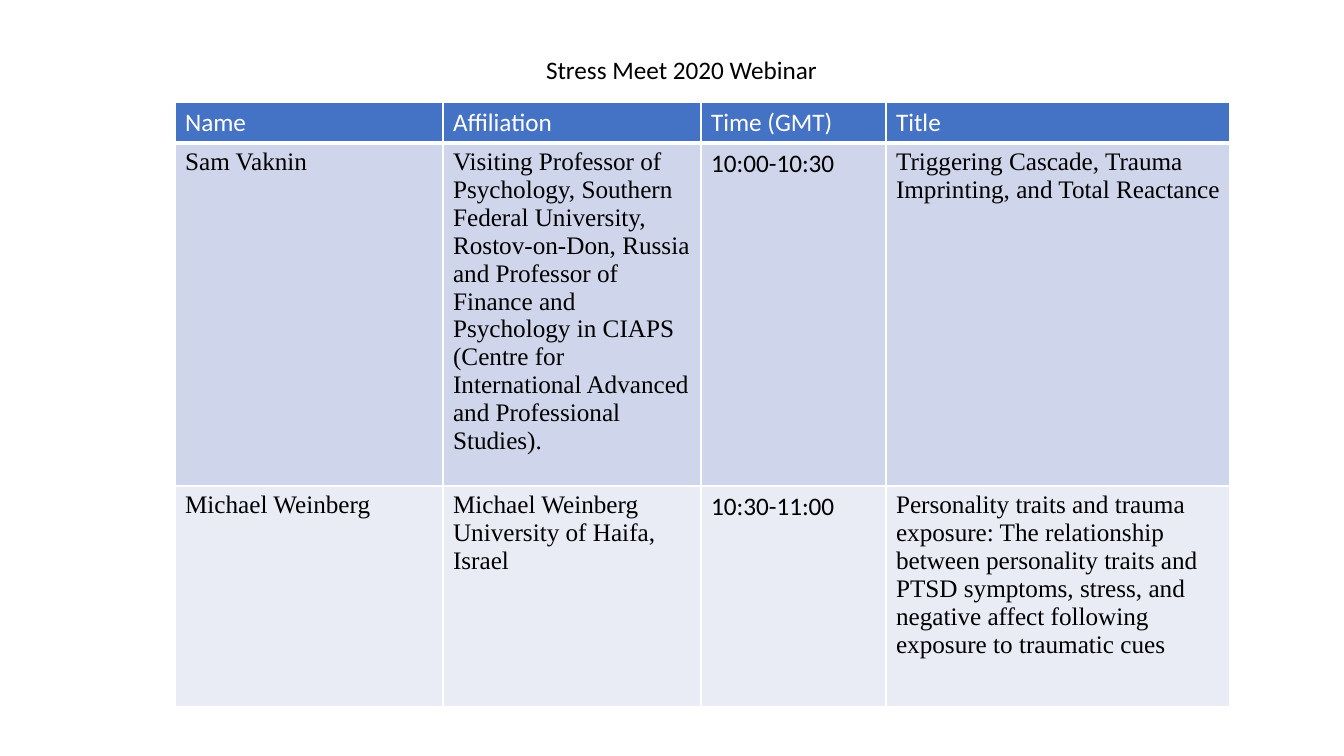
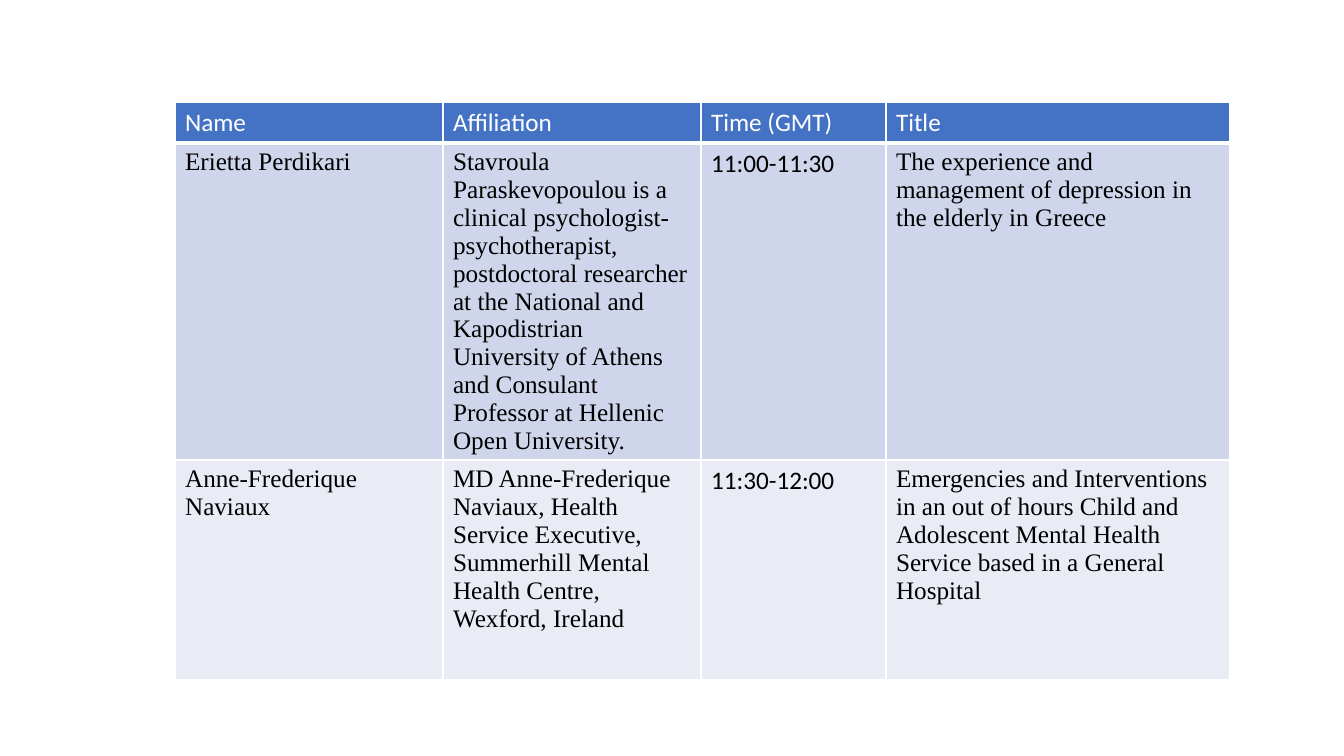
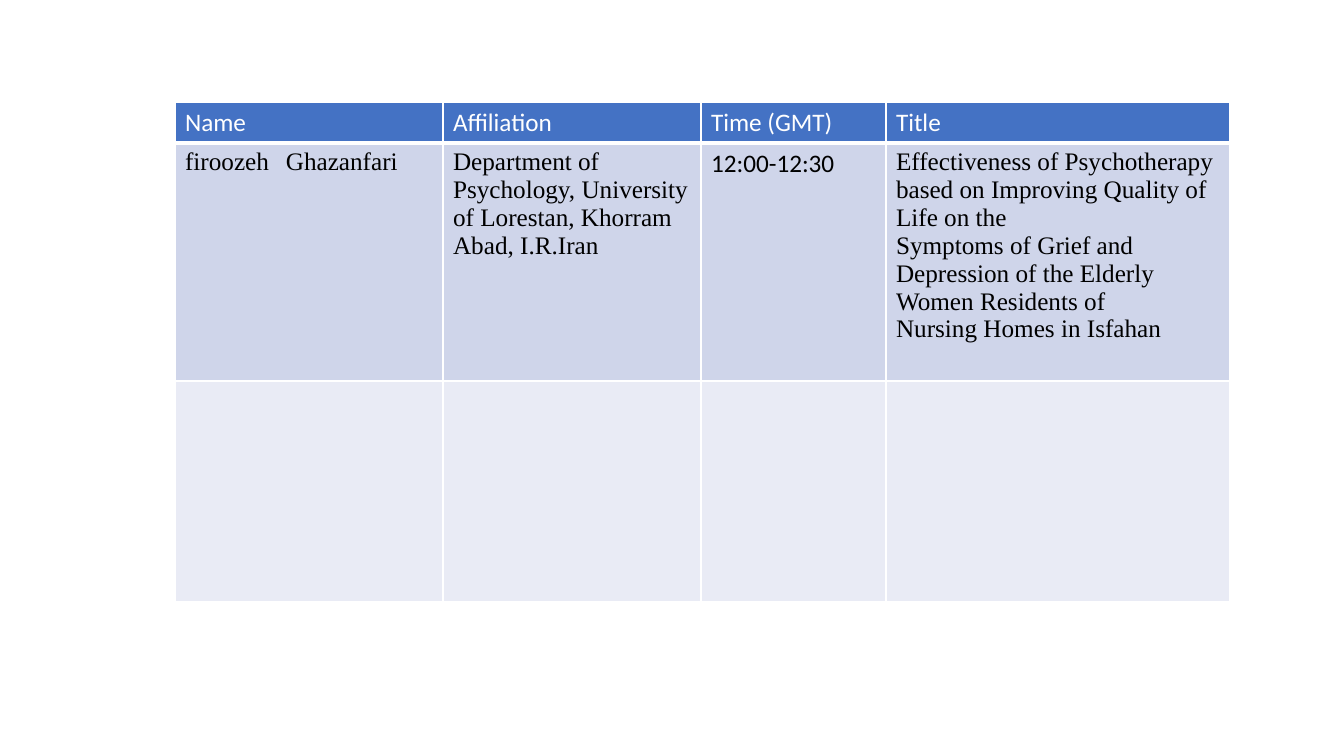
from lxml.etree import SubElement
from pptx import Presentation
from pptx.dml.color import RGBColor
from pptx.enum.text import MSO_ANCHOR, PP_ALIGN
from pptx.oxml.ns import qn
from pptx.util import Pt

PX = 12192000 / 1344
SANS, SERIF = "Calibri", "Times New Roman"
WHITE, BLACK, BLUE = "FFFFFF", "000000", "4472C4"
BANDS = ["CFD5EA", "E9EBF5"]

HEADER = ["Name", "Affiliation", "Time (GMT)", "Title"]
COLUMN_FONTS = [SERIF, SERIF, SANS, SERIF]
COLUMN_WIDTHS = [268, 258, 185, 344]
HEADER_HEIGHT = 41

SESSIONS = [
    ("Stress Meet 2020 Webinar", [343, 221], [
        ["Sam Vaknin",
         "Visiting Professor of Psychology, Southern Federal University, "
         "Rostov-on-Don, Russia and Professor of Finance and Psychology in CIAPS "
         "(Centre for International Advanced and Professional Studies).",
         "10:00-10:30",
         "Triggering Cascade, Trauma Imprinting, and Total Reactance"],
        ["Michael Weinberg",
         "Michael Weinberg\nUniversity of Haifa, Israel",
         "10:30-11:00",
         "Personality traits and trauma exposure: The relationship between "
         "personality traits and PTSD symptoms, stress, and negative affect "
         "following exposure to traumatic cues"]]),
    (None, [317, 220], [
        ["Erietta Perdikari",
         "Stavroula Paraskevopoulou is a clinical psychologist-psychotherapist, "
         "postdoctoral researcher at the National and Kapodistrian University of "
         "Athens and Consulant Professor at Hellenic Open University.",
         "11:00-11:30",
         "The experience and management of depression in the elderly in Greece"],
        ["Anne-Frederique Naviaux",
         "MD Anne-Frederique Naviaux, Health Service Executive, Summerhill "
         "Mental Health Centre, Wexford, Ireland",
         "11:30-12:00",
         "Emergencies and Interventions in an out of hours Child and Adolescent "
         "Mental Health Service based in a General Hospital"]]),
    (None, [238, 221], [
        ["firoozeh\tGhazanfari",
         "Department of Psychology, University of Lorestan, Khorram Abad, I.R.Iran",
         "12:00-12:30",
         "Effectiveness of Psychotherapy based on Improving Quality of Life on the\n"
         "Symptoms of Grief and Depression of the Elderly Women Residents of\n"
         "Nursing Homes in Isfahan"],
        [""] * 4]),
]


def px(n):
    return round(n * PX)


def rgb(value):
    return RGBColor.from_string(value)


class Deck:
    """Holds the presentation, its style and the current slide."""

    def __init__(self):
        self.prs = Presentation()
        self.prs.slide_width, self.prs.slide_height = px(1344), px(756)
        self.s = None

    def slide(self, title=None):
        layout = 5 if title else 6
        self.s = self.prs.slides.add_slide(self.prs.slide_layouts[layout])
        if title:
            self.title(title)

    def text(self, tf, text, font, color, align=PP_ALIGN.LEFT):
        tf.text = text
        for p in tf.paragraphs:
            p.alignment = align
            p.font.name, p.font.size, p.font.bold = font, Pt(18), False
            p.font.color.rgb = rgb(color)

    def title(self, text):
        sp = self.s.shapes.title
        sp.left, sp.top, sp.width, sp.height = px(396), px(49), px(571), px(41)
        sp.text_frame.vertical_anchor = MSO_ANCHOR.MIDDLE
        self.text(sp.text_frame, text, SANS, BLACK, PP_ALIGN.CENTER)

    def borders(self, cell, bottom):
        tcPr = cell._tc.get_or_add_tcPr()
        for side, width in zip("LRTB", (1, 1, 1, bottom)):
            ln = SubElement(tcPr, qn(f"a:ln{side}"), w=str(Pt(width)))
            fill = SubElement(ln, qn("a:solidFill"))
            SubElement(fill, qn("a:srgbClr"), val=WHITE)

    def cell(self, cell, text, font, color, fill, bottom=1):
        self.borders(cell, bottom)
        cell.fill.solid()
        cell.fill.fore_color.rgb = rgb(fill)
        self.text(cell.text_frame, text, font, color)

    def schedule(self, rows, row_heights):
        heights = [HEADER_HEIGHT] + row_heights
        table = self.s.shapes.add_table(
            len(heights), len(HEADER), px(175), px(102),
            px(sum(COLUMN_WIDTHS)), px(sum(heights))).table
        for column, width in zip(table.columns, COLUMN_WIDTHS):
            column.width = px(width)
        for row, height in zip(table.rows, heights):
            row.height = px(height)
        for c, (label, font) in enumerate(zip(HEADER, COLUMN_FONTS)):
            self.cell(table.cell(0, c), label, SANS, WHITE, BLUE, bottom=3)
            for r, (row, band) in enumerate(zip(rows, BANDS), 1):
                self.cell(table.cell(r, c), row[c], font, BLACK, band)


def main():
    deck = Deck()
    for title, row_heights, rows in SESSIONS:
        deck.slide(title)
        deck.schedule(rows, row_heights)
    deck.prs.save("out.pptx")


if __name__ == "__main__":
    main()
